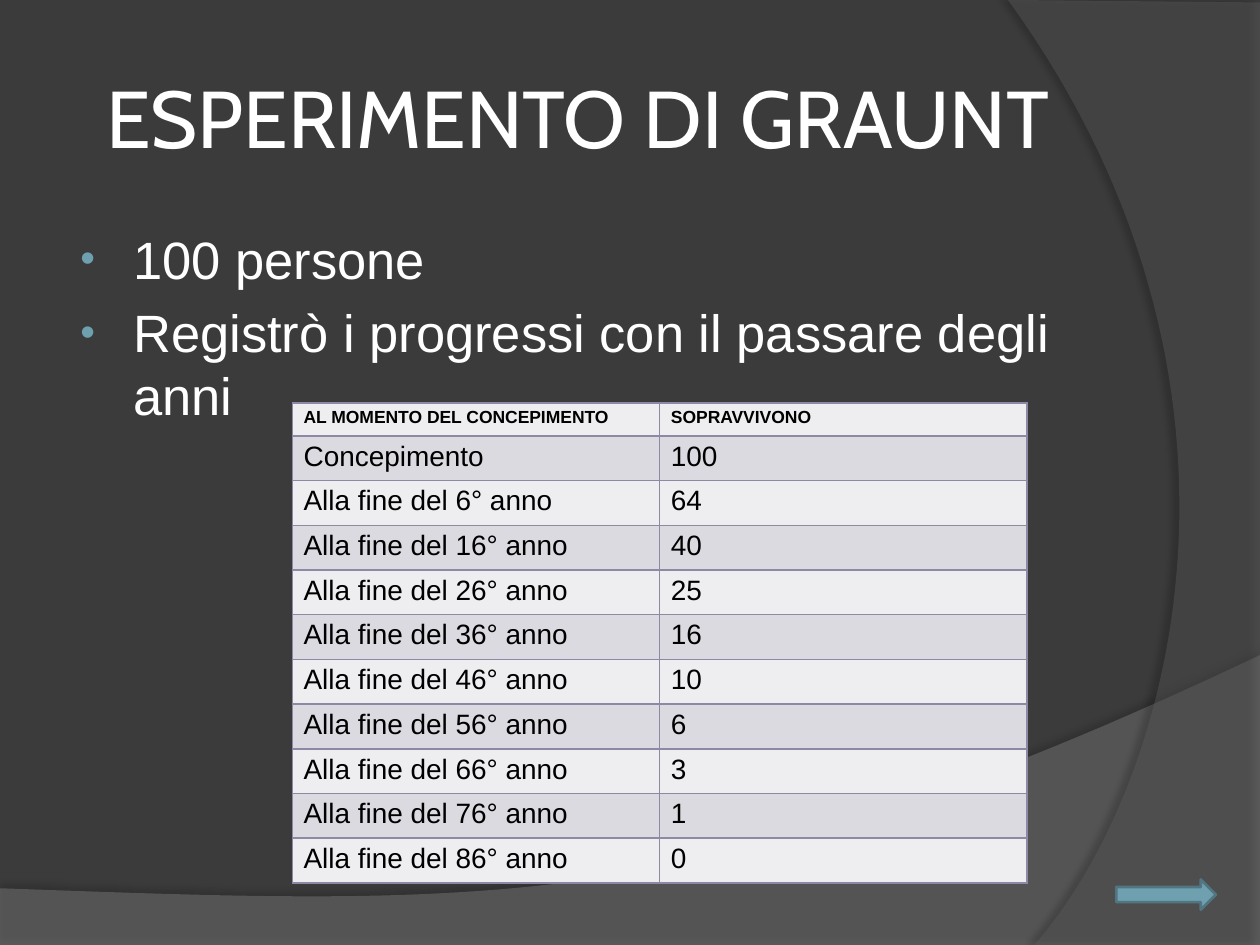
from lxml.etree import SubElement
from pptx import Presentation
from pptx.dml.color import RGBColor
from pptx.enum.shapes import MSO_SHAPE
from pptx.enum.text import MSO_ANCHOR, PP_ALIGN
from pptx.oxml.ns import qn
from pptx.util import Inches, Pt

# Content
TITLE = "ESPERIMENTO DI GRAUNT"
BULLETS = ["100 persone", "Registrò i progressi con il passare degli anni"]
HEADER = ("AL MOMENTO DEL CONCEPIMENTO", "SOPRAVVIVONO")
SURVIVORS = [64, 40, 25, 16, 10, 6, 3, 1, 0]
ROWS = [HEADER, ("Concepimento", "100")] + [
    (f"Alla fine del {6 + 10 * step}° anno", str(count))
    for step, count in enumerate(SURVIVORS)
]

# Colours and sizes
BACKGROUND = RGBColor(0x3B, 0x3B, 0x3B)
BOTTOM_WAVE = RGBColor(0x7F, 0x7F, 0x7F)
RIGHT_WAVE = RGBColor(0x5E, 0x5E, 0x5E)
WHITE = RGBColor(0xFF, 0xFF, 0xFF)
BLACK = RGBColor(0, 0, 0)
ACCENT = RGBColor(0x6E, 0xA0, 0xB0)
ACCENT_DARK = RGBColor(0x51, 0x76, 0x82)
BANDS = (RGBColor(0xEE, 0xED, 0xF0), RGBColor(0xDB, 0xDA, 0xE0))
GRID_LINE = RGBColor(0x8D, 0x89, 0xA4)
WIDTH, HEIGHT = 10, 7.5
TEXT_LEFT, TEXT_WIDTH = 0.5, 8.17
TABLE_BOX = (2.32, 3.2, 5.83, 3.81)
HEADER_HEIGHT = 0.26


def add_element(parent, tag, **attributes):
    element = SubElement(parent, qn(tag))
    for name, value in attributes.items():
        element.set(name, str(value))
    return element


def write(paragraph, text, *, size, color, font="Arial", bold=False):
    span = paragraph.add_run()
    span.text = text
    span.font.name = font
    span.font.size = Pt(size)
    span.font.bold = bold
    span.font.color.rgb = color


def curve(start, first, second, end, steps=60):
    """Points along a cubic Bezier curve."""
    points = []
    for step in range(steps + 1):
        t = step / steps
        weights = ((1 - t) ** 3, 3 * t * (1 - t) ** 2, 3 * t * t * (1 - t), t ** 3)
        points.append(tuple(
            sum(w * p[axis] for w, p in zip(weights, (start, first, second, end)))
            for axis in (0, 1)))
    return points


def add_wave(page, points, color, opacity, shadow_opacity, distance, direction):
    corners = [(Inches(x), Inches(y)) for x, y in points]
    builder = page.shapes.build_freeform(*corners[0])
    builder.add_line_segments(corners[1:], close=True)
    wave = builder.convert_to_shape()
    wave.fill.solid()
    wave.fill.fore_color.rgb = color
    wave.line.fill.background()
    properties = wave._element.spPr
    fill_color = properties.find(qn("a:solidFill")).find(qn("a:srgbClr"))
    add_element(fill_color, "a:alpha", val=opacity * 1000)
    effects = add_element(properties, "a:effectLst")
    shadow = add_element(effects, "a:outerShdw", blurRad=Pt(4), dist=Pt(distance),
                         dir=direction * 60000, algn="ctr", rotWithShape=0)
    shade = add_element(shadow, "a:srgbClr", val=str(BLACK))
    add_element(shade, "a:alpha", val=shadow_opacity * 1000)


def add_bullet(paragraph):
    properties = paragraph._p.get_or_add_pPr()
    properties.set("marL", str(Inches(0.46)))
    properties.set("indent", str(Inches(-0.42)))
    add_element(add_element(properties, "a:buClr"), "a:srgbClr", val=str(ACCENT))
    add_element(properties, "a:buSzPct", val=80000)
    add_element(properties, "a:buFont", typeface="Arial")
    add_element(properties, "a:buChar", char="•")


def format_cell(cell, text, size, bold, fill):
    cell.margin_left = cell.margin_right = Inches(0.09)
    cell.margin_top = cell.margin_bottom = Inches(0.04)
    write(cell.text_frame.paragraphs[0], text, size=size, color=BLACK, bold=bold)
    properties = cell._tc.get_or_add_tcPr()
    for side in ("a:lnL", "a:lnR", "a:lnT", "a:lnB"):
        border = add_element(properties, side, w=Pt(1))
        paint = add_element(border, "a:solidFill")
        add_element(paint, "a:srgbClr", val=str(GRID_LINE))
    cell.fill.solid()
    cell.fill.fore_color.rgb = fill


def main():
    deck = Presentation()
    deck.slide_width, deck.slide_height = Inches(WIDTH), Inches(HEIGHT)
    page = deck.slides.add_slide(deck.slide_layouts[5])
    page.background.fill.solid()
    page.background.fill.fore_color.rgb = BACKGROUND

    # Background waves
    bottom = curve((WIDTH, 5.2), (5.59, 7.29), (3.91, 7.19), (0, 7.05))
    add_wave(page, bottom + [(0, HEIGHT), (WIDTH, HEIGHT)], BOTTOM_WAVE, 45, 35, 3.5, 270)
    right = curve((8.21, HEIGHT), (9.35, 6.19), (10.18, 3), (8, 0))
    add_wave(page, right + [(WIDTH, 0.02), (WIDTH, HEIGHT)], RIGHT_WAVE, 40, 45, 4, 180)

    # Title, brought in front of the waves
    title = page.shapes.title
    page.shapes._spTree.append(title._element)
    title.left, title.top = Inches(TEXT_LEFT), Inches(0.3)
    title.width, title.height = Inches(TEXT_WIDTH), Inches(1.25)
    frame = title.text_frame
    frame.vertical_anchor = MSO_ANCHOR.MIDDLE
    frame.margin_left = frame.margin_right = Inches(0.05)
    frame.margin_top = frame.margin_bottom = Inches(0.05)
    frame.paragraphs[0].alignment = PP_ALIGN.CENTER
    write(frame.paragraphs[0], TITLE, size=46, color=WHITE, font="Cabin")

    # Bullets
    box = page.shapes.add_textbox(Inches(TEXT_LEFT), Inches(1.75),
                                  Inches(TEXT_WIDTH), Inches(4.95))
    frame = box.text_frame
    frame.word_wrap = True
    for index, text in enumerate(BULLETS):
        para = frame.add_paragraph() if index else frame.paragraphs[0]
        para.space_before = Pt(6)
        add_bullet(para)
        write(para, text, size=30, color=WHITE)

    # Survival table
    table = page.shapes.add_table(len(ROWS), len(HEADER),
                                  *(Inches(length) for length in TABLE_BOX)).table
    row_height = (TABLE_BOX[3] - HEADER_HEIGHT) / (len(ROWS) - 1)
    for index, values in enumerate(ROWS):
        is_header = index == 0
        table.rows[index].height = Inches(HEADER_HEIGHT if is_header else row_height)
        for column, text in enumerate(values):
            format_cell(table.cell(index, column), text, 10 if is_header else 16,
                        is_header, BANDS[index % 2])

    # Arrow to the next page
    arrow = page.shapes.add_shape(MSO_SHAPE.RIGHT_ARROW, Inches(8.86), Inches(6.98),
                                  Inches(0.79), Inches(0.24))
    arrow.shadow.inherit = False
    arrow.fill.solid()
    arrow.fill.fore_color.rgb = ACCENT
    arrow.line.color.rgb = ACCENT_DARK
    arrow.line.width = Pt(1.5)

    deck.save("out.pptx")


if __name__ == "__main__":
    main()
